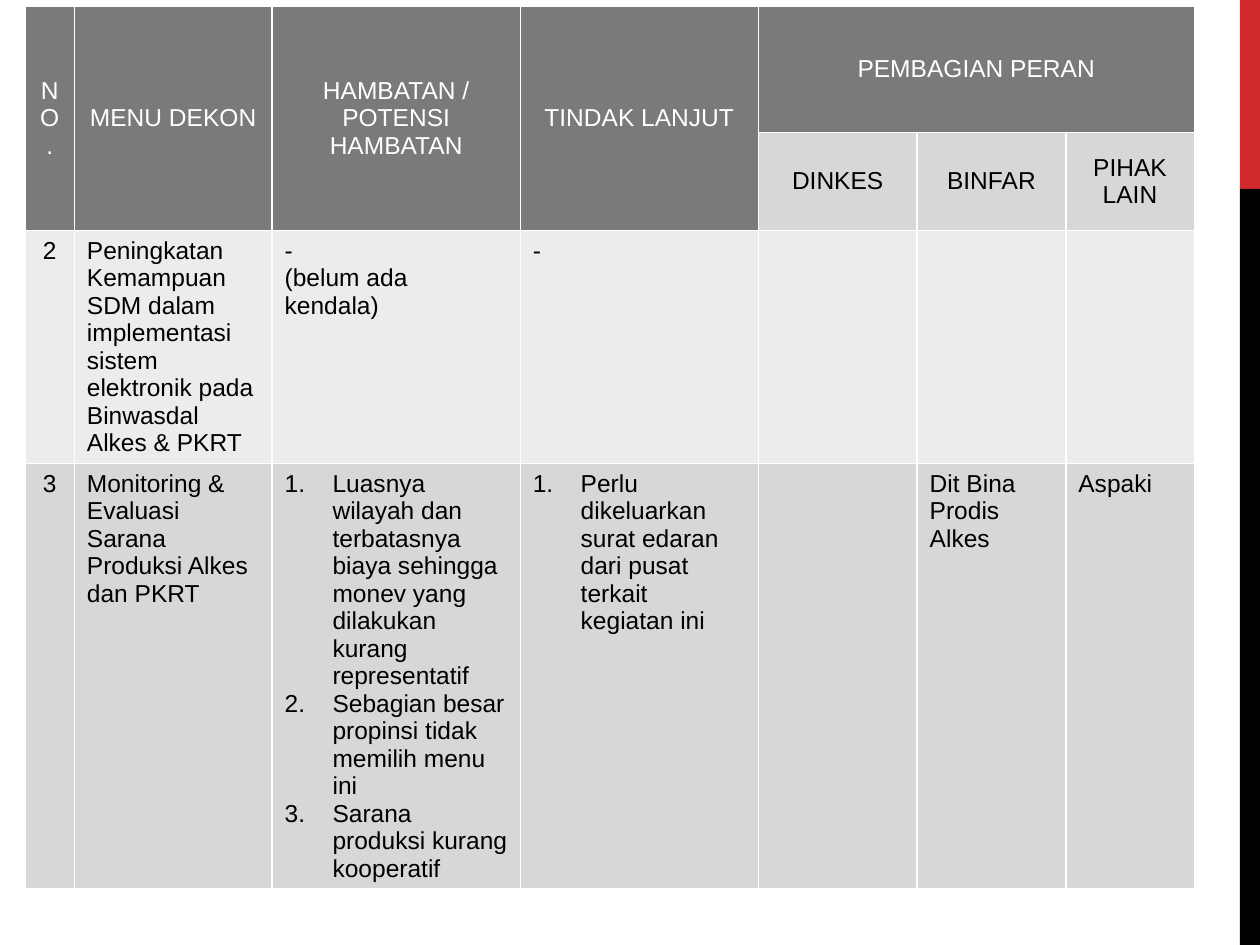
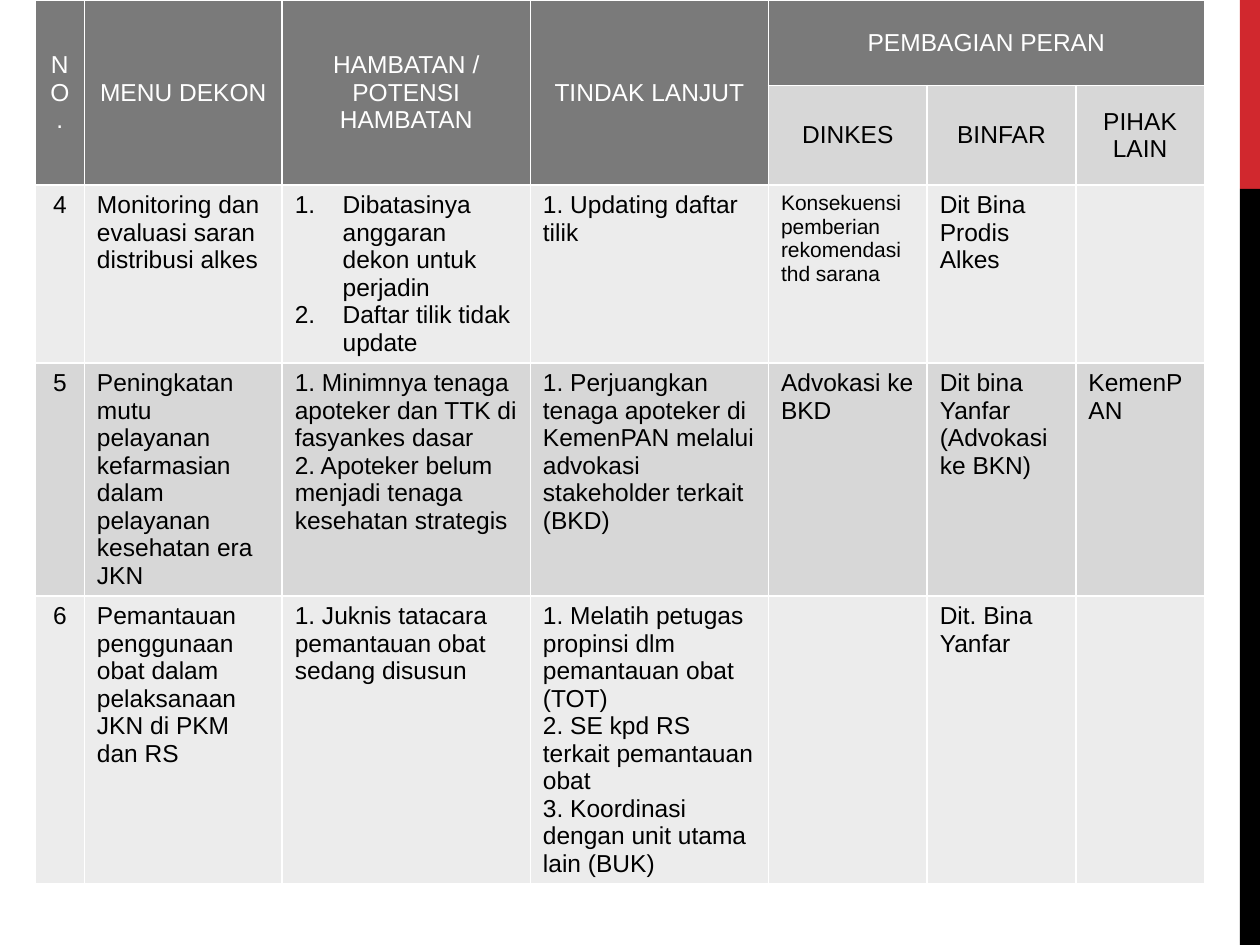
from lxml import etree
from pptx import Presentation
from pptx.dml.color import RGBColor
from pptx.enum.shapes import MSO_SHAPE
from pptx.enum.text import MSO_ANCHOR, PP_ALIGN
from pptx.oxml.ns import qn
from pptx.util import Inches, Pt

RECTANGLE = MSO_SHAPE.RECTANGLE
MIDDLE, TOP = MSO_ANCHOR.MIDDLE, MSO_ANCHOR.TOP
CENTER, LEFT = PP_ALIGN.CENTER, PP_ALIGN.LEFT

BLANK_LAYOUT = 6
RED, BLACK, WHITE = "D1282E", "000000", "FFFFFF"
HEADER_GRAY, DARK_GRAY, LIGHT_GRAY = "7A7A7A", "D7D7D7", "ECECEC"
LIST_INDENT = 0.38

COLUMN_WIDTHS = [0.39, 1.57, 1.97, 1.89, 1.26, 1.18, 1.02]
HEADINGS = ["NO.", "MENU DEKON", "HAMBATAN / POTENSI HAMBATAN",
            "TINDAK LANJUT", "PEMBAGIAN PERAN"]
ROLES = ["DINKES", "BINFAR", "PIHAK LAIN"]
ROLE_COLUMN = len(HEADINGS) - 1

HEADER_STYLE = {"fill": HEADER_GRAY, "color": WHITE, "anchor": MIDDLE, "align": CENTER}
ROLE_STYLE = {"fill": DARK_GRAY, "anchor": MIDDLE, "align": CENTER}


class Numbered(list):
    """Paragraphs that carry automatic numbers."""


# Cells hold a text or a list of paragraphs, one entry for each column.
TABLES = [
    {
        "left": 0.2, "top": 0.05, "height": 7.35,
        "row_heights": [1, 0.78, 0.63, 0.63],
        "rows": [
            ["2",
             "Peningkatan Kemampuan SDM dalam implementasi sistem elektronik "
             "pada Binwasdal Alkes & PKRT",
             ["-", "(belum ada kendala)"], "-", "", "", ""],
            ["3",
             "Monitoring & Evaluasi Sarana Produksi Alkes dan PKRT",
             Numbered(["Luasnya wilayah dan terbatasnya biaya sehingga monev "
                       "yang dilakukan kurang representatif",
                       "Sebagian besar propinsi tidak memilih menu ini",
                       "Sarana produksi kurang kooperatif"]),
             Numbered(["Perlu dikeluarkan surat edaran dari pusat terkait kegiatan ini"]),
             "", "Dit Bina Prodis Alkes", "Aspaki"],
        ],
        "sizes": {},
    },
    {
        "left": 0.28, "top": 0, "height": 7.37,
        "row_heights": [0.68, 0.79, 0.73, 0.63, 0.63],
        "rows": [
            ["4",
             "Monitoring dan evaluasi saran distribusi alkes",
             Numbered(["Dibatasinya anggaran dekon untuk perjadin",
                       "Daftar tilik tidak update"]),
             "1. Updating daftar tilik",
             "Konsekuensi pemberian rekomendasi thd sarana",
             "Dit Bina Prodis Alkes", ""],
            ["5",
             "Peningkatan mutu pelayanan kefarmasian dalam pelayanan kesehatan era JKN",
             ["1. Minimnya tenaga apoteker dan TTK di fasyankes dasar",
              "2. Apoteker belum menjadi tenaga kesehatan strategis"],
             ["1. Perjuangkan tenaga apoteker di KemenPAN melalui",
              "advokasi stakeholder terkait (BKD)"],
             "Advokasi ke BKD", "Dit bina Yanfar (Advokasi ke BKN)", "KemenPAN"],
            ["6",
             "Pemantauan penggunaan obat dalam pelaksanaan JKN di PKM dan RS",
             "1. Juknis tatacara pemantauan obat sedang disusun",
             ["1. Melatih petugas propinsi dlm pemantauan obat (TOT)",
              "2. SE kpd RS terkait pemantauan obat",
              "3. Koordinasi dengan unit utama lain (BUK)"],
             "", "Dit. Bina Yanfar", ""],
        ],
        "sizes": {(0, 4): 12},
    },
]


def rgb(value):
    return RGBColor.from_string(value)


def number_paragraph(paragraph):
    properties = paragraph._p.get_or_add_pPr()
    properties.set("marL", str(Inches(LIST_INDENT)))
    properties.set("indent", str(-Inches(LIST_INDENT)))
    etree.SubElement(properties, qn("a:buFont"), typeface="+mj-lt")
    etree.SubElement(properties, qn("a:buAutoNum"), type="arabicPeriod")


class Deck:
    font_name = "Arial"
    font_size = 14

    def __init__(self):
        self.presentation = Presentation()
        self.presentation.slide_width = Inches(10)
        self.presentation.slide_height = Inches(7.5)
        self.slide = None

    def add_slide(self):
        layout = self.presentation.slide_layouts[BLANK_LAYOUT]
        self.slide = self.presentation.slides.add_slide(layout)

    def add_master_band(self, top, height, color):
        """Draw a band at the right edge and move it to the slide master."""
        band = self.slide.shapes.add_shape(
            RECTANGLE, Inches(9.84), Inches(top), Inches(0.16), Inches(height))
        band.shadow.inherit = False
        band.fill.solid()
        band.fill.fore_color.rgb = rgb(color)
        band.line.fill.background()
        self.presentation.slide_master.shapes._spTree.append(band._element)

    def fill_cell(self, cell, content, fill, color=BLACK, anchor=TOP, align=LEFT, size=None):
        cell.fill.solid()
        cell.fill.fore_color.rgb = rgb(fill)
        cell.vertical_anchor = anchor
        texts = [content] if isinstance(content, str) else content
        cell.text = "\n".join(texts)
        font_format = {"name": self.font_name, "size": Pt(size or self.font_size),
                       "bold": False}
        for paragraph in cell.text_frame.paragraphs:
            paragraph.alignment = align
            if isinstance(content, Numbered):
                number_paragraph(paragraph)
            for run in paragraph.runs:
                for name, value in font_format.items():
                    setattr(run.font, name, value)
                run.font.color.rgb = rgb(color)

    def add_header(self, table):
        for column, heading in enumerate(HEADINGS):
            cell = table.cell(0, column)
            if column == ROLE_COLUMN:
                cell.merge(table.cell(0, len(COLUMN_WIDTHS) - 1))
            else:
                cell.merge(table.cell(1, column))
            self.fill_cell(cell, heading, **HEADER_STYLE)
        for column, role in enumerate(ROLES, ROLE_COLUMN):
            self.fill_cell(table.cell(1, column), role, **ROLE_STYLE)

    def add_action_table(self, left, top, height, row_heights, rows, sizes):
        frame = self.slide.shapes.add_table(
            len(row_heights), len(COLUMN_WIDTHS), Inches(left), Inches(top),
            Inches(sum(COLUMN_WIDTHS)), Inches(height))
        table = frame.table
        table.horz_banding = False
        for column, width in zip(table.columns, COLUMN_WIDTHS):
            column.width = Inches(width)
        for row, row_height in zip(table.rows, row_heights):
            row.height = Inches(row_height)
        frame.height = Inches(height)

        self.add_header(table)
        for row_index, row in enumerate(rows):
            fill = DARK_GRAY if row_index % 2 else LIGHT_GRAY
            for column, content in enumerate(row):
                self.fill_cell(table.cell(row_index + 2, column), content, fill,
                               align=LEFT if column else CENTER,
                               size=sizes.get((row_index, column)))


def main():
    deck = Deck()
    for index, table in enumerate(TABLES):
        deck.add_slide()
        if index == 0:
            deck.add_master_band(0, 1.5, RED)
            deck.add_master_band(1.5, 6, BLACK)
        deck.add_action_table(**table)
    deck.presentation.save("out.pptx")


if __name__ == "__main__":
    main()
